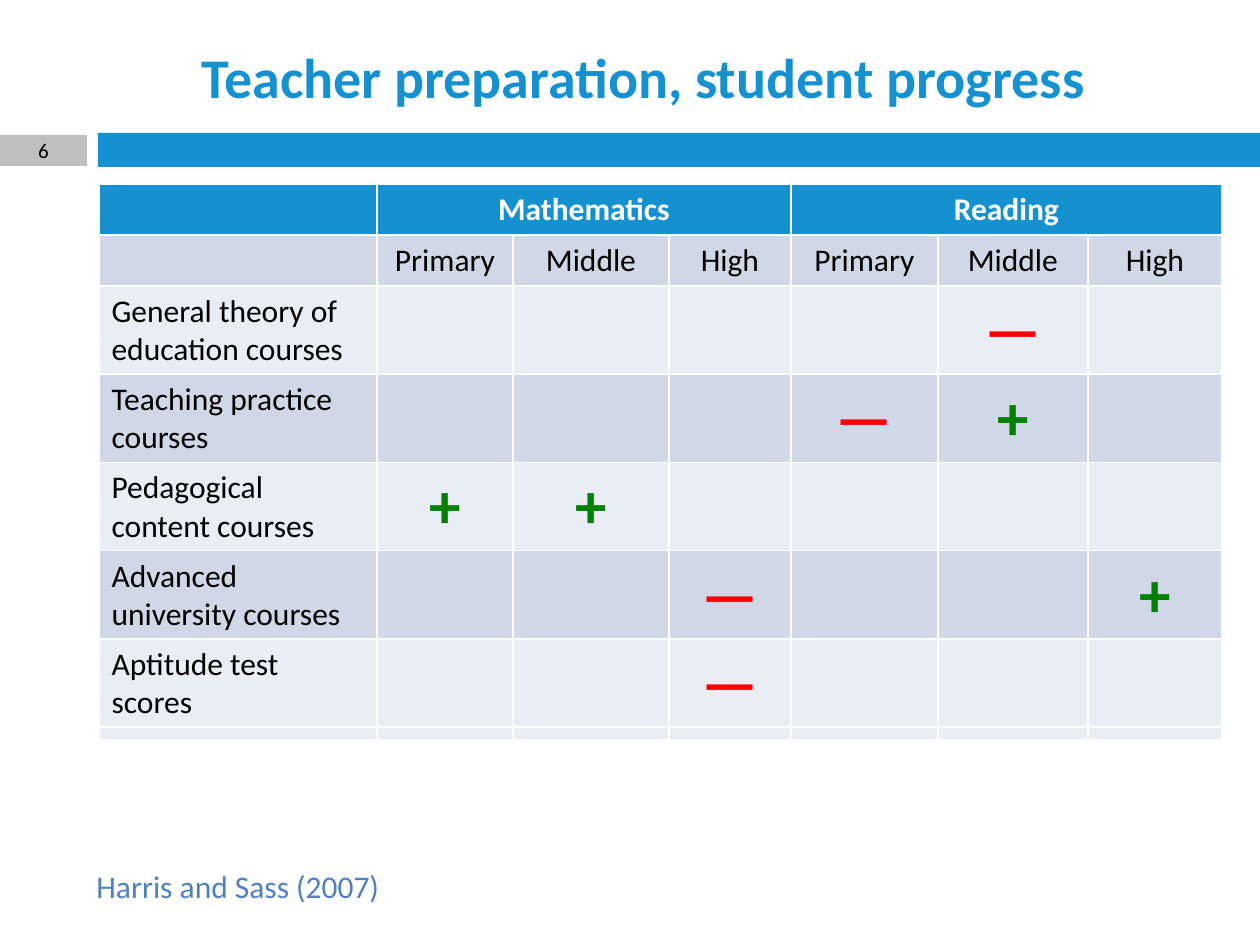
from pptx import Presentation
from pptx import util as u
from pptx.dml import color as col
from pptx.enum import shapes, text

BLUE = col.RGBColor(0x16, 0x91, 0xD0)
GRAY = col.RGBColor(0xBF, 0xBF, 0xBF)
STEEL = col.RGBColor(0x4F, 0x81, 0xBD)
DARK = col.RGBColor(0xD0, 0xD8, 0xE8)
LIGHT = col.RGBColor(0xE9, 0xED, 0xF4)
WHITE = col.RGBColor(0xFF, 0xFF, 0xFF)
BLACK = col.RGBColor(0, 0, 0)
RED = col.RGBColor(0xFF, 0, 0)
GREEN = col.RGBColor(0, 0x80, 0)

LEFT = text.PP_ALIGN.LEFT
MID = text.PP_ALIGN.CENTER
COLS = [278, 136, 156, 122, 147, 150, 134]
HEAD = 51
ROW = 88
LEVELS = ["Primary", "Middle", "High"]
TOPICS = [
    "General theory of education courses",
    "Teaching practice courses",
    "Pedagogical content courses",
    "Advanced university courses",
    "Aptitude test scores",
]
MARKS = {
    (2, 5): "—", (3, 4): "—", (3, 5): "+", (4, 1): "+",
    (4, 2): "+", (5, 3): "—", (5, 6): "+", (6, 3): "—",
}


def px(n):
    return u.Emu(round(n * u.Inches(1) / 126))


def write(frame, words, size=18, color=BLACK, bold=False, align=LEFT):
    para = frame.paragraphs[0]
    para.alignment = align
    run = para.add_run()
    run.text = words
    run.font.name = "Calibri"
    run.font.size = u.Pt(size)
    run.font.bold = bold
    run.font.color.rgb = color


def bar(slide, box, fill):
    shape = slide.shapes.add_shape(shapes.MSO_SHAPE.RECTANGLE, *map(px, box))
    shape.shadow.inherit = False
    shape.fill.solid()
    shape.fill.fore_color.rgb = fill
    shape.line.fill.background()
    return shape


def header(slide, box):
    x, y, w, h = box
    bar(slide, (x + 98, y + 133, w - 98, 34), BLUE)
    page = bar(slide, (x, y + 135, 87, 31), GRAY).text_frame
    page.vertical_anchor = text.MSO_ANCHOR.MIDDLE
    page.margin_top = page.margin_bottom = 0
    write(page, "6", size=12, align=MID)

    title = slide.shapes.title
    title.left, title.top = px(x + 98), px(y + 33)
    title.width, title.height = px(1091), px(86)
    title.text_frame.vertical_anchor = text.MSO_ANCHOR.MIDDLE
    write(title.text_frame, "Teacher preparation, student progress",
          size=32, color=BLUE, bold=True, align=MID)


def grid(slide, box, marks, last):
    x, y, w, h = box
    rows = [HEAD] * 2 + [ROW] * (len(TOPICS) - 1) + [last]
    table = slide.shapes.add_table(
        len(rows), len(COLS), px(x), px(y), px(w), px(h)).table
    for part, size in zip(table.columns, COLS):
        part.width = px(size)
    for part, size in zip(table.rows, rows):
        part.height = px(size)

    for r in range(len(rows)):
        for c in range(len(COLS)):
            cell = table.cell(r, c)
            cell.fill.solid()
            cell.fill.fore_color.rgb = (
                BLUE if r == 0 else DARK if r % 2 else LIGHT)

    for c, name in ((1, "Mathematics"), (4, "Reading")):
        cell = table.cell(0, c)
        cell.merge(table.cell(0, c + 2))
        write(cell.text_frame, name, color=WHITE, bold=True, align=MID)
    for c, name in enumerate(LEVELS * 2, 1):
        write(table.cell(1, c).text_frame, name, align=MID)
    for r, name in enumerate(TOPICS, 2):
        write(table.cell(r, 0).text_frame, name)
    for spot, sign in marks.items():
        cell = table.cell(*spot)
        cell.vertical_anchor = text.MSO_ANCHOR.MIDDLE
        write(cell.text_frame, sign, size=36, bold=True, align=MID,
              color=GREEN if sign == "+" else RED)


def source(slide, box):
    frame = slide.shapes.add_textbox(*map(px, box)).text_frame
    frame.word_wrap = True
    write(frame, "Harris and Sass (2007)", color=STEEL)


def main():
    deck = Presentation()
    deck.slide_width, deck.slide_height = px(1260), px(945)
    slide = deck.slides.add_slide(deck.slide_layouts[5])
    header(slide, (0, 0, 1260, 167))
    area = (99, 184, sum(COLS), 543)
    grid(slide, area, {}, ROW + 7)
    source(slide, (84, 861, 475, 50))
    grid(slide, area, MARKS, ROW)
    deck.save("out.pptx")


if __name__ == "__main__":
    main()
